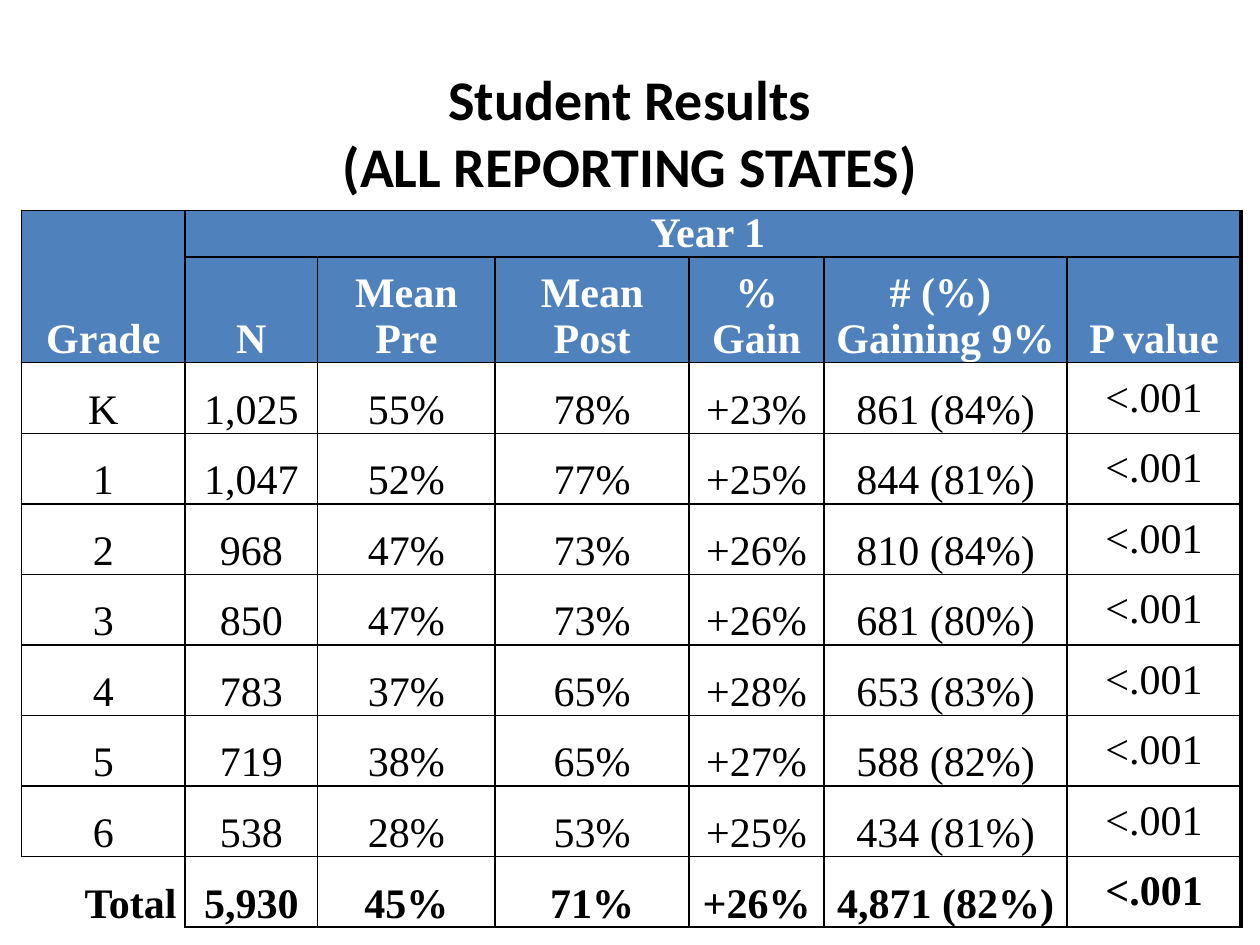
from lxml.etree import SubElement
from pptx import Presentation
from pptx.dml.color import RGBColor
from pptx.enum.text import MSO_ANCHOR, PP_ALIGN
from pptx.oxml.ns import qn
from pptx.util import Inches, Pt

COLORS = {"header": "4F81BD", "white": "FFFFFF", "black": "000000"}
COL_WIDTHS = [1.3, 1.05, 1.41, 1.54, 1.07, 1.93, 1.38]
ROW_HEIGHTS = [0.28, 0.84] + [0.56] * 8
P_VALUE = "<.001"
HEADERS = [
    ["", "Year 1 ", "", "", "", "", ""],
    ["Grade", "N", "Mean\nPre", "Mean\nPost", "%\nGain", "# (%) \nGaining 9%", "P value"],
]
RESULTS = [
    ["K", "1,025", "55%", "78%", "+23%", "861 (84%)"],
    ["1", "1,047", "52%", "77%", "+25%", "844 (81%)"],
    ["2", "968", "47%", "73%", "+26%", "810 (84%)"],
    ["3", "850", "47%", "73%", "+26%", "681 (80%)"],
    ["4", "783", "37%", "65%", "+28%", "653 (83%)"],
    ["5", "719", "38%", "65%", "+27%", "588 (82%)"],
    ["6", "538", "28%", "53%", "+25%", "434 (81%)"],
    ["Total", "5,930", "45%", "71%", "+26%", "4,871 (82%)"],
]
ROWS = HEADERS + [row + [P_VALUE] for row in RESULTS]
LAST_ROW, LAST_COL = len(ROWS) - 1, len(COL_WIDTHS) - 1
# Sides left open, by (row, column)
OPEN_SIDES = {(0, 0): "B", (1, 0): "T", (LAST_ROW, 0): "LB"}


def format_text(tf, align, color, **font):
    for p in tf.paragraphs:
        p.alignment = align
        for r in p.runs:
            r.font.color.rgb = RGBColor.from_string(COLORS[color])
            for name, value in font.items():
                setattr(r.font, name, value)


def set_borders(cell, widths):
    """Draw each side at its width in points; zero leaves the side open."""
    tc_pr = cell._tc.get_or_add_tcPr()
    for side, width in widths.items():
        ln = SubElement(tc_pr, qn(f"a:ln{side}"), w=str(Pt(width)))
        if width:
            fill = SubElement(ln, qn("a:solidFill"))
            SubElement(fill, qn("a:srgbClr"), val=COLORS["black"])
        else:
            SubElement(ln, qn("a:noFill"))


def format_cell(cell, row, col):
    is_header = row < len(HEADERS)
    is_total = row == LAST_ROW
    at_right_edge = col == LAST_COL or cell.is_merge_origin
    widths = {"L": 1, "R": 2.25 if at_right_edge else 1, "T": 1, "B": 1}
    widths.update(dict.fromkeys(OPEN_SIDES.get((row, col), ""), 0))
    set_borders(cell, widths)
    cell.fill.solid()
    cell.fill.fore_color.rgb = RGBColor.from_string(COLORS["header" if is_header else "white"])
    cell.margin_left = cell.margin_right = Inches(0.07)
    cell.margin_top = cell.margin_bottom = 0
    is_p_value = col == LAST_COL and not is_header
    cell.vertical_anchor = MSO_ANCHOR.MIDDLE if is_p_value else MSO_ANCHOR.BOTTOM
    cell.text = ROWS[row][col]
    format_text(
        cell.text_frame,
        PP_ALIGN.RIGHT if is_total and col == 0 else PP_ALIGN.CENTER,
        "white" if is_header else "black",
        name="Times New Roman", size=Pt(24), bold=is_header or is_total,
    )


def add_title(s):
    sp = s.shapes.title
    sp.left, sp.top, sp.width, sp.height = map(Inches, (0.5, 0.42, 9, 1.25))
    tf = sp.text_frame
    tf.text = "Student Results\v(ALL REPORTING STATES)"
    tf.vertical_anchor = MSO_ANCHOR.MIDDLE
    format_text(tf, PP_ALIGN.CENTER, "black", name="Calibri", size=Pt(32), bold=True)


def add_results_table(s):
    table = s.shapes.add_table(
        len(ROWS), len(COL_WIDTHS), Inches(0.17), Inches(1.67),
        Inches(sum(COL_WIDTHS)), Inches(sum(ROW_HEIGHTS)),
    ).table
    table.first_row = table.horz_banding = False
    for column, width in zip(table.columns, COL_WIDTHS):
        column.width = Inches(width)
    for row, height in zip(table.rows, ROW_HEIGHTS):
        row.height = Inches(height)
    table.cell(0, 1).merge(table.cell(0, LAST_COL))
    for row in range(len(ROWS)):
        for col in range(len(COL_WIDTHS)):
            cell = table.cell(row, col)
            if not cell.is_spanned:
                format_cell(cell, row, col)


def main():
    prs = Presentation()
    prs.slide_width, prs.slide_height = Inches(10), Inches(7.5)
    s = prs.slides.add_slide(prs.slide_layouts[5])
    add_title(s)
    add_results_table(s)
    prs.save("out.pptx")


if __name__ == "__main__":
    main()
